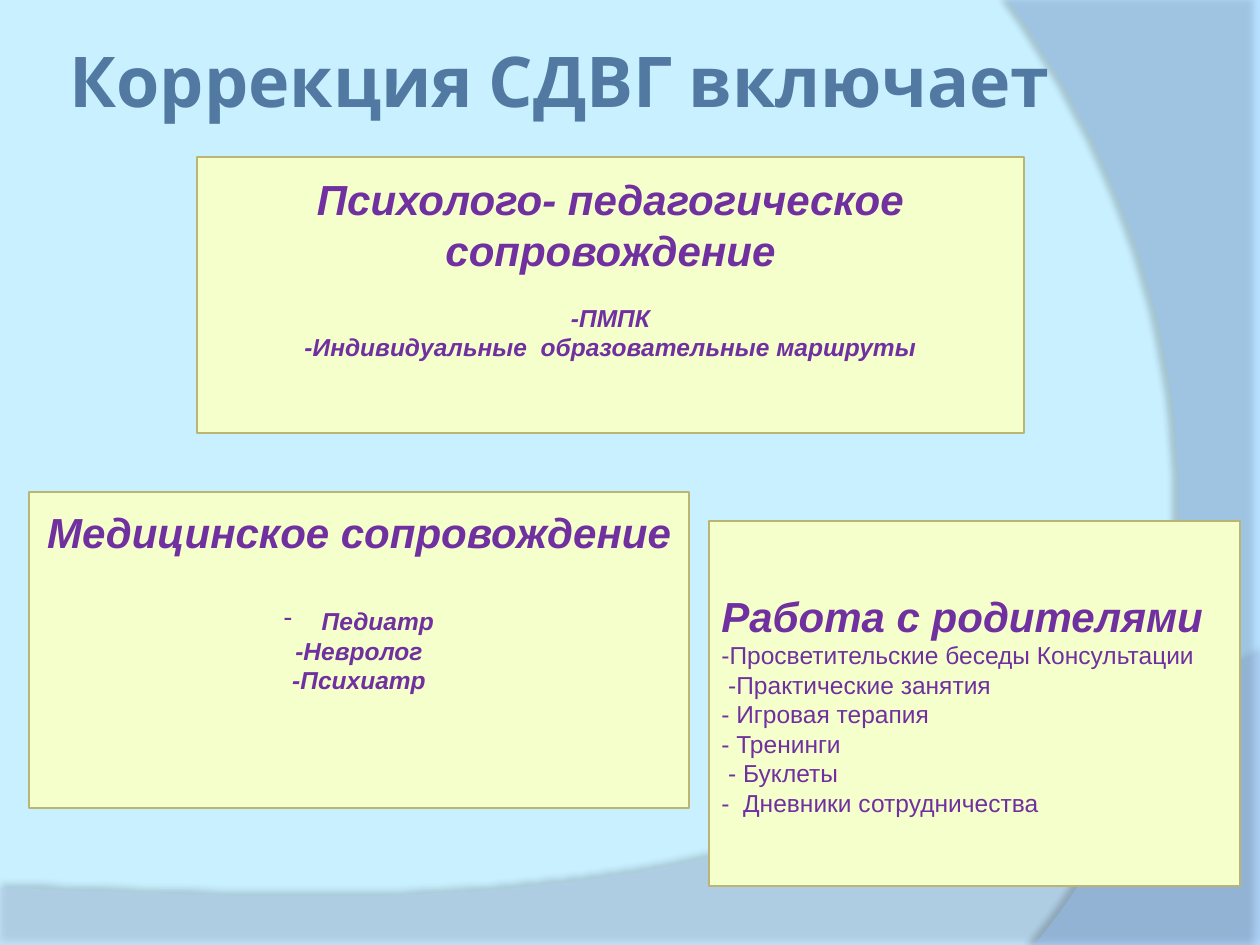
from dataclasses import dataclass

from lxml import etree
from pptx import Presentation
from pptx import util as u
from pptx.dml.color import RGBColor
from pptx.enum import shapes, text
from pptx.oxml.ns import qn

PX = 914400 / 126
WIDTH, HEIGHT = 1260, 945


@dataclass(frozen=True)
class Theme:
    sky: str = "C9F0FF"
    bottom_wave: str = "B6D0F1"
    right_wave: str = "9BC7FF"
    title: str = "5179A2"
    body: str = "7030A0"
    panel: str = "F4FFCB"
    border: str = "BBB573"
    title_font: str = "Cabin"
    body_font: str = "Arial"
    title_size: int = 40
    heading_size: int = 24
    item_size: int = 14


THEME = Theme()


def px(value):
    return u.Emu(round(value * PX))


def paint(fill, color):
    fill.solid()
    fill.fore_color.rgb = RGBColor.from_string(color)


def style(para, font, size, color, bold=False, italic=False):
    for span in para.runs:
        span.font.name = font
        span.font.size = u.Pt(size)
        span.font.bold = bold
        span.font.italic = italic
        span.font.color.rgb = RGBColor.from_string(color)


def cubic(start, first, second, end, steps=40):
    """Points along a Bezier curve, both ends included."""
    points = []
    for step in range(steps + 1):
        t = step / steps
        weights = ((1 - t) ** 3, 3 * t * (1 - t) ** 2, 3 * t * t * (1 - t), t ** 3)
        points.append(tuple(
            sum(w * c for w, c in zip(weights, axis))
            for axis in zip(start, first, second, end)))
    return points


def add_wave(page, corners, curve, color, opacity, shadow_opacity, distance, angle):
    """Translucent area with one curved side and a soft shadow."""
    points = corners + cubic(*curve)
    builder = page.shapes.build_freeform(*points[0], scale=PX)
    builder.add_line_segments(points[1:], close=True)
    wave = builder.convert_to_shape()
    paint(wave.fill, color)
    wave.line.fill.background()
    tint = wave.fill._xPr.find(qn("a:solidFill"))[0]
    etree.SubElement(tint, qn("a:alpha"), val=str(opacity * 1000))
    wave.shadow.inherit = False
    effects = wave._element.spPr.find(qn("a:effectLst"))
    shadow = etree.SubElement(
        effects, qn("a:outerShdw"), blurRad=str(u.Pt(4)),
        dist=str(u.Pt(distance)), dir=str(angle * 60000), rotWithShape="0")
    shade = etree.SubElement(shadow, qn("a:srgbClr"), val="000000")
    etree.SubElement(shade, qn("a:alpha"), val=str(shadow_opacity * 1000))


def add_title(page, words):
    box = page.shapes.add_textbox(px(63), px(38), px(1029), px(256))
    frame = box.text_frame
    frame.word_wrap = True
    frame.margin_left = frame.margin_top = frame.margin_bottom = 0
    frame.margin_right = px(36)
    frame.text = words
    para = frame.paragraphs[0]
    para.alignment = text.PP_ALIGN.CENTER
    style(para, THEME.title_font, THEME.title_size, THEME.title, bold=True)


def add_panel(page, place, heading, items, align, emphasis, top=None, gap=0):
    """Panel with a heading and items; it is centred vertically unless top is given."""
    panel = page.shapes.add_shape(shapes.MSO_SHAPE.RECTANGLE, *map(px, place))
    panel.shadow.inherit = False
    paint(panel.fill, THEME.panel)
    paint(panel.line.fill, THEME.border)
    panel.line.width = u.Pt(1.5)
    frame = panel.text_frame
    frame.word_wrap = True
    frame.vertical_anchor = text.MSO_ANCHOR.MIDDLE
    if top is not None:
        frame.vertical_anchor = text.MSO_ANCHOR.TOP
        frame.margin_top = px(top)
    frame.text = "\n".join([heading] + items)
    first, *rest = frame.paragraphs
    style(first, THEME.body_font, THEME.heading_size, THEME.body, True, True)
    for para in rest:
        style(para, THEME.body_font, THEME.item_size, THEME.body, emphasis, emphasis)
    for para in frame.paragraphs:
        para.alignment = align
    rest[0].space_before = u.Pt(gap)
    return panel


def add_dash(para):
    props = para._p.get_or_add_pPr()
    props.set("marL", str(u.Inches(0.3)))
    props.set("indent", str(-u.Inches(0.3)))
    etree.SubElement(props, qn("a:buChar"), char="-")


def main():
    deck = Presentation()
    deck.slide_width, deck.slide_height = px(WIDTH), px(HEIGHT)
    page = deck.slides.add_slide(deck.slide_layouts[6])
    paint(page.background.fill, THEME.sky)

    add_wave(page, [(0, HEIGHT), (WIDTH, HEIGHT)],
             ((WIDTH, 655), (704, 919), (493, 906), (0, 888)),
             THEME.bottom_wave, 45, 35, 3.5, 270)
    add_wave(page, [(WIDTH, 0), (WIDTH, HEIGHT)],
             ((1034, HEIGHT), (1178, 780), (1283, 378), (1008, 0)),
             THEME.right_wave, 40, 45, 4, 180)
    add_title(page, "Коррекция СДВГ включает")

    center, left = text.PP_ALIGN.CENTER, text.PP_ALIGN.LEFT
    add_panel(page, (709, 521, 531, 365), "Работа с родителями", [
        "-Просветительские беседы Консультации",
        " -Практические занятия",
        "- Игровая терапия",
        "- Тренинги",
        " - Буклеты",
        "-  Дневники сотрудничества",
    ], left, emphasis=False)
    medical = add_panel(page, (29, 492, 660, 316), "Медицинское сопровождение",
                        ["Педиатр", "-Невролог", "-Психиатр"],
                        center, emphasis=True, top=15, gap=28)
    add_dash(medical.text_frame.paragraphs[1])
    add_panel(page, (197, 157, 827, 276), "Психолого- педагогическое сопровождение",
              ["-ПМПК", "-Индивидуальные  образовательные маршруты"],
              center, emphasis=True, top=17, gap=16)
    deck.save("out.pptx")


if __name__ == "__main__":
    main()
